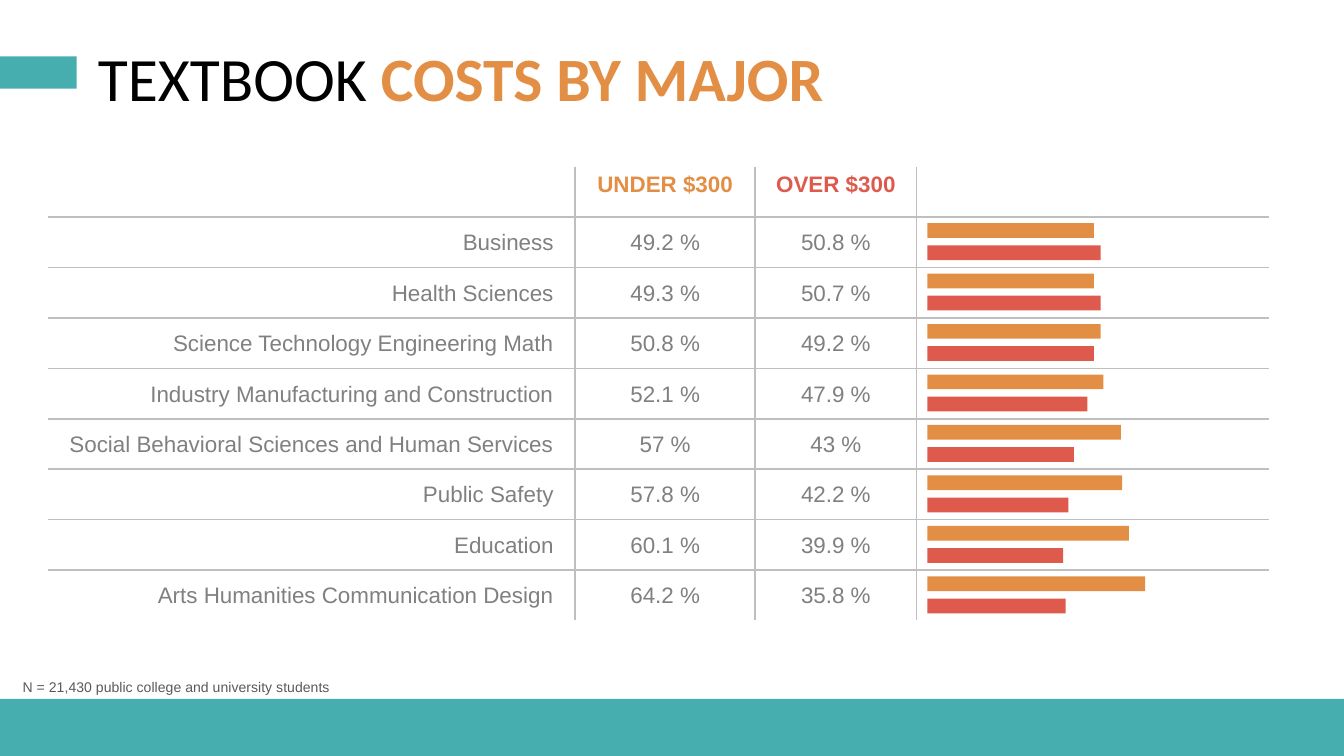
from lxml import etree
from pptx import Presentation
from pptx import util as u
from pptx.dml.color import RGBColor
from pptx.enum import shapes, text
from pptx.oxml import ns

TEAL, ORANGE, RED = "46AEAF", "E28F45", "DE5A4D"
BLACK, GREY, NOTE_GREY, RULE = "000000", "808080", "595959", "BFBFBF"
LEFT, CENTER, RIGHT = text.PP_ALIGN.LEFT, text.PP_ALIGN.CENTER, text.PP_ALIGN.RIGHT
TOP, MIDDLE = text.MSO_ANCHOR.TOP, text.MSO_ANCHOR.MIDDLE

# Major, share under $300, share over $300, bar lengths in inches
MAJORS = [
    ("Business", "49.2 %", "50.8 %", 1.24, 1.29),
    ("Health Sciences", "49.3 %", "50.7 %", 1.24, 1.29),
    ("Science Technology Engineering Math", "50.8 %", "49.2 %", 1.29, 1.24),
    ("Industry Manufacturing and Construction", "52.1 %", "47.9 %", 1.31, 1.19),
    ("Social Behavioral Sciences and Human Services", "57 %", "43 %", 1.44, 1.09),
    ("Public Safety", "57.8 %", "42.2 %", 1.45, 1.05),
    ("Education", "60.1 %", "39.9 %", 1.5, 1.01),
    ("Arts Humanities Communication Design", "64.2 %", "35.8 %", 1.62, 1.03),
]
WIDTH = 10
HEIGHT = WIDTH * 9 / 16
FOOTER_TOP = 5.2
COLUMNS = [3.92, 1.34, 1.2, 2.62]
TABLE_HEIGHT = 3.38
ROW_HEIGHT = TABLE_HEIGHT / (len(MAJORS) + 1)
BAR_LEFT, BAR_TOP, BAR_HEIGHT = 6.9, 1.66, 0.11
PAIR_PITCH = 1.5 * BAR_HEIGHT


def rgb(value):
    return RGBColor.from_string(value)


class SlideBuilder:
    font = "Arial"

    def __init__(self, prs):
        self.s = prs.slides.add_slide(prs.slide_layouts[6])

    def style(self, r, size, color, bold=False, font=None):
        r.font.name = font or self.font
        r.font.size = u.Pt(size)
        r.font.bold = bold
        r.font.color.rgb = rgb(color)

    def rect(self, x, y, w, h, color):
        sp = self.s.shapes.add_shape(shapes.MSO_SHAPE.RECTANGLE,
                                     *map(u.Inches, (x, y, w, h)))
        sp.shadow.inherit = False
        sp.fill.solid()
        sp.fill.fore_color.rgb = rgb(color)
        sp.line.fill.background()

    def textbox(self, x, y, w, h, runs, size, spacing, font=None, wrap=True):
        sp = self.s.shapes.add_textbox(*map(u.Inches, (x, y, w, h)))
        tf = sp.text_frame
        tf.word_wrap = wrap
        tf.vertical_anchor = MIDDLE
        p = tf.paragraphs[0]
        p.alignment = LEFT
        p.line_spacing = spacing
        for words, color, bold in runs:
            r = p.add_run()
            r.text = words
            self.style(r, size, color, bold, font)

    def table(self, x, y, columns, rows, row_height):
        frame = self.s.shapes.add_table(
            rows, len(columns),
            *map(u.Inches, (x, y, sum(columns), rows * row_height)))
        tbl = frame.table
        tbl.first_row = tbl.horz_banding = False
        for column, width in zip(tbl.columns, columns):
            column.width = u.Inches(width)
        for row in tbl.rows:
            row.height = u.Inches(row_height)
        for i in range(rows):
            for j in range(len(columns)):
                cell = tbl.cell(i, j)
                cell.fill.background()
                self.margins(cell, (0, 0, 0, 0))
                self.inner_borders(cell, j > 0, j < len(columns) - 1, i > 0, i < rows - 1)
        return tbl

    def margins(self, cell, insets):
        (cell.margin_left, cell.margin_top,
         cell.margin_right, cell.margin_bottom) = map(u.Inches, insets)

    def inner_borders(self, cell, *sides):
        tc_pr = cell._tc.get_or_add_tcPr()
        for index, (tag, shown) in enumerate(zip(("lnL", "lnR", "lnT", "lnB"), sides)):
            ln = etree.Element(ns.qn(f"a:{tag}"), w=str(u.Pt(1)))
            if shown:
                fill = etree.SubElement(ln, ns.qn("a:solidFill"))
                etree.SubElement(fill, ns.qn("a:srgbClr"), val=RULE)
            else:
                etree.SubElement(ln, ns.qn("a:noFill"))
            tc_pr.insert(index, ln)

    def cell_text(self, cell, words, color, align, anchor, insets, bold=False):
        self.margins(cell, insets)
        cell.vertical_anchor = anchor
        cell.text_frame.text = words
        p = cell.text_frame.paragraphs[0]
        p.alignment = align
        self.style(p.runs[0], 12, color, bold)


def main():
    prs = Presentation()
    prs.slide_width, prs.slide_height = u.Inches(WIDTH), u.Inches(HEIGHT)
    b = SlideBuilder(prs)

    # Footer band, title accent and title
    b.rect(0, FOOTER_TOP, WIDTH, HEIGHT - FOOTER_TOP, TEAL)
    b.rect(0, 0.42, 0.57, 0.24, TEAL)
    b.textbox(0.63, 0.32, 9.37, 0.57,
              [("TEXTBOOK ", BLACK, False), ("COSTS BY MAJOR", ORANGE, True)],
              33, 0.9, font="Calibri")

    # Cost table
    tbl = b.table(0.36, 1.24, COLUMNS, len(MAJORS) + 1, ROW_HEIGHT)
    for j, (heading, color) in enumerate([("UNDER $300", ORANGE), ("OVER $300", RED)], 1):
        b.cell_text(tbl.cell(0, j), heading, color, CENTER, TOP,
                    (0.07, 0.04, 0.07, 0.04), bold=True)
    for i, (major, under, over, *lengths) in enumerate(MAJORS):
        b.cell_text(tbl.cell(i + 1, 0), major, GREY, RIGHT, MIDDLE, (0.01, 0.01, 0.16, 0))
        for j, share in enumerate((under, over), 1):
            b.cell_text(tbl.cell(i + 1, j), share, GREY, CENTER, MIDDLE,
                        (0.01, 0.01, 0.01, 0))

        # Pair of bars in the last column
        for k, (length, color) in enumerate(zip(lengths, (ORANGE, RED))):
            b.rect(BAR_LEFT, BAR_TOP + i * ROW_HEIGHT + k * PAIR_PITCH,
                   length, BAR_HEIGHT, color)

    # Sample size note
    b.textbox(0.07, 4.97, 2.51, 0.25,
              [("N = 21,430 public college and university students", NOTE_GREY, False)],
              7.5, 1.2, wrap=False)

    prs.save("out.pptx")


if __name__ == "__main__":
    main()
